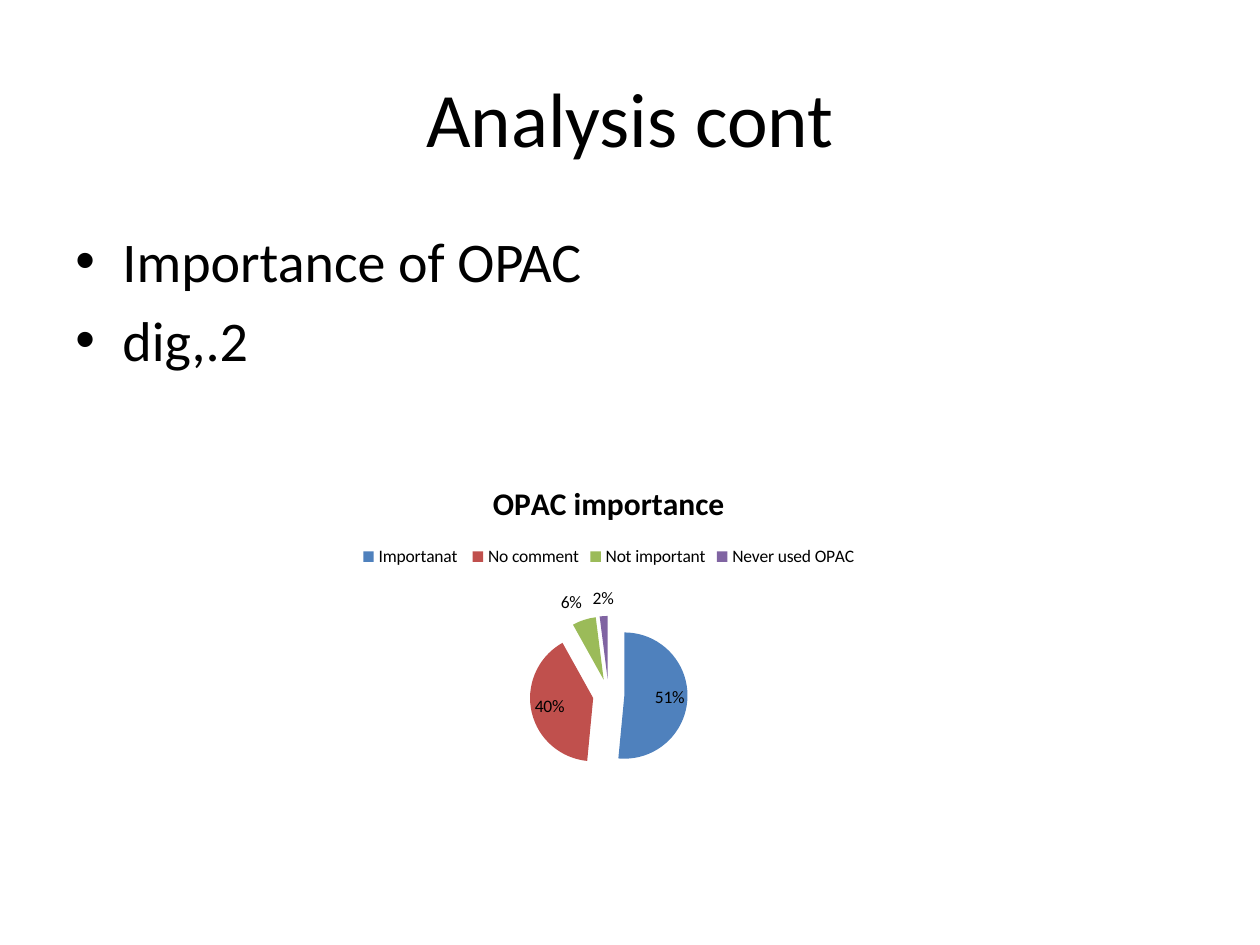
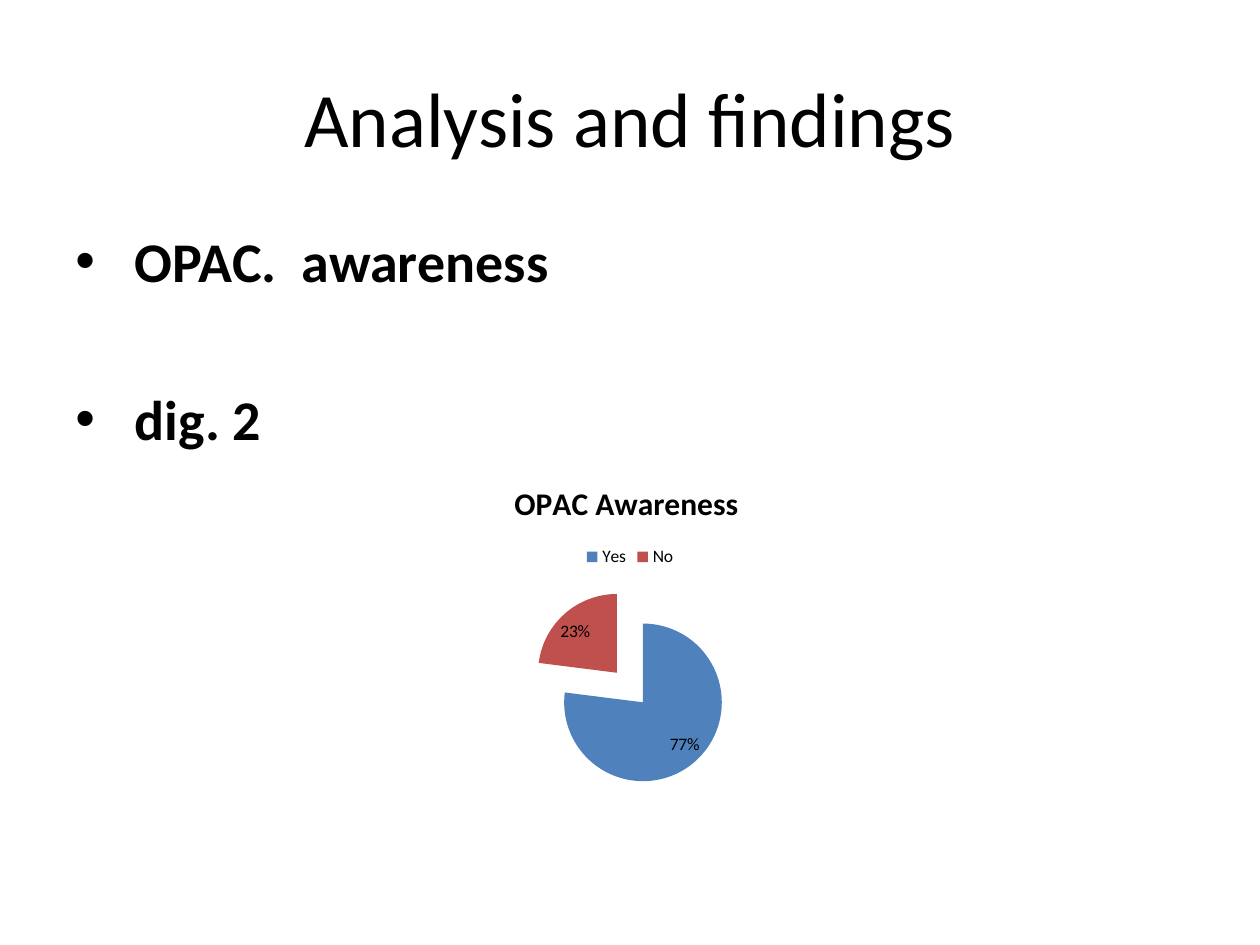
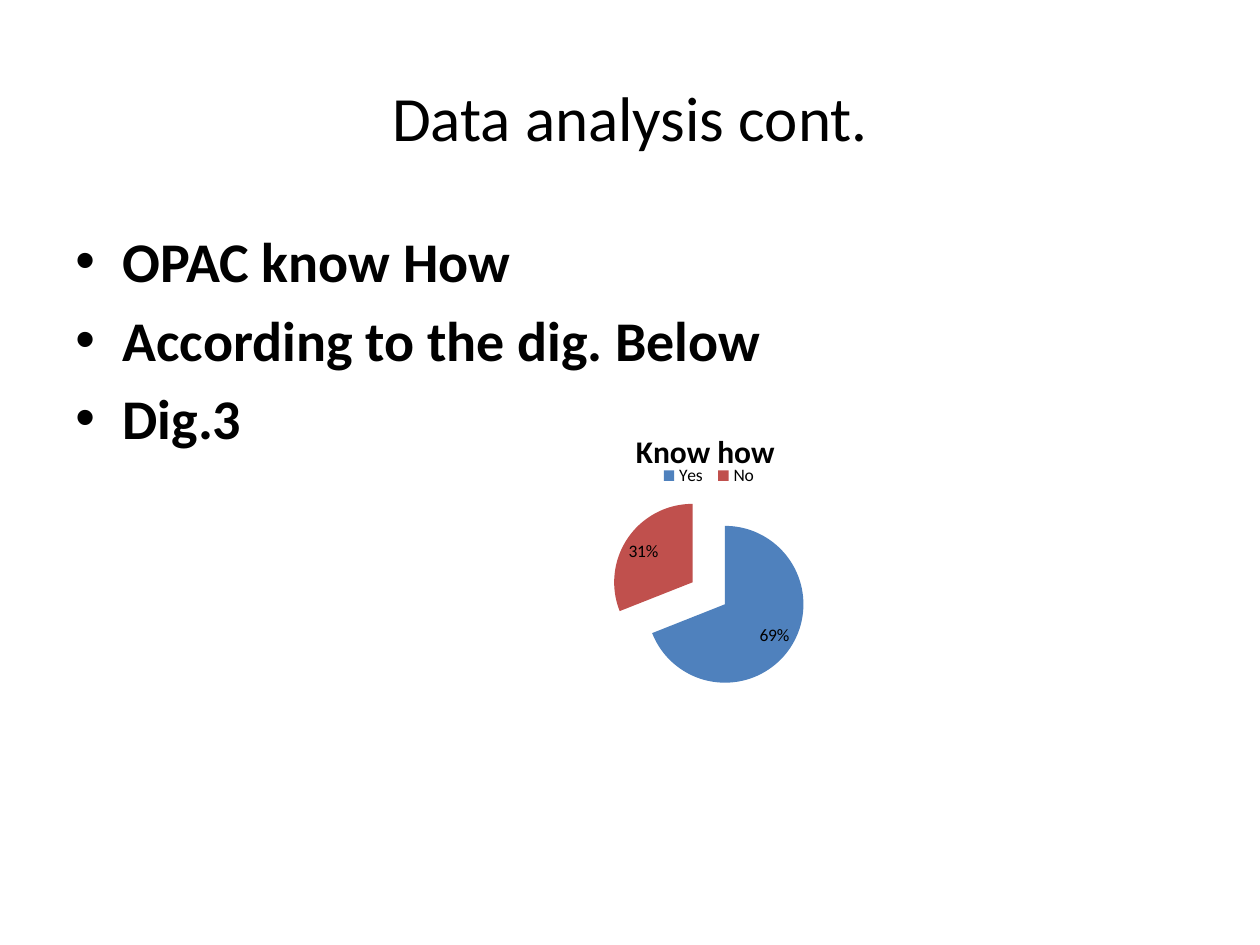
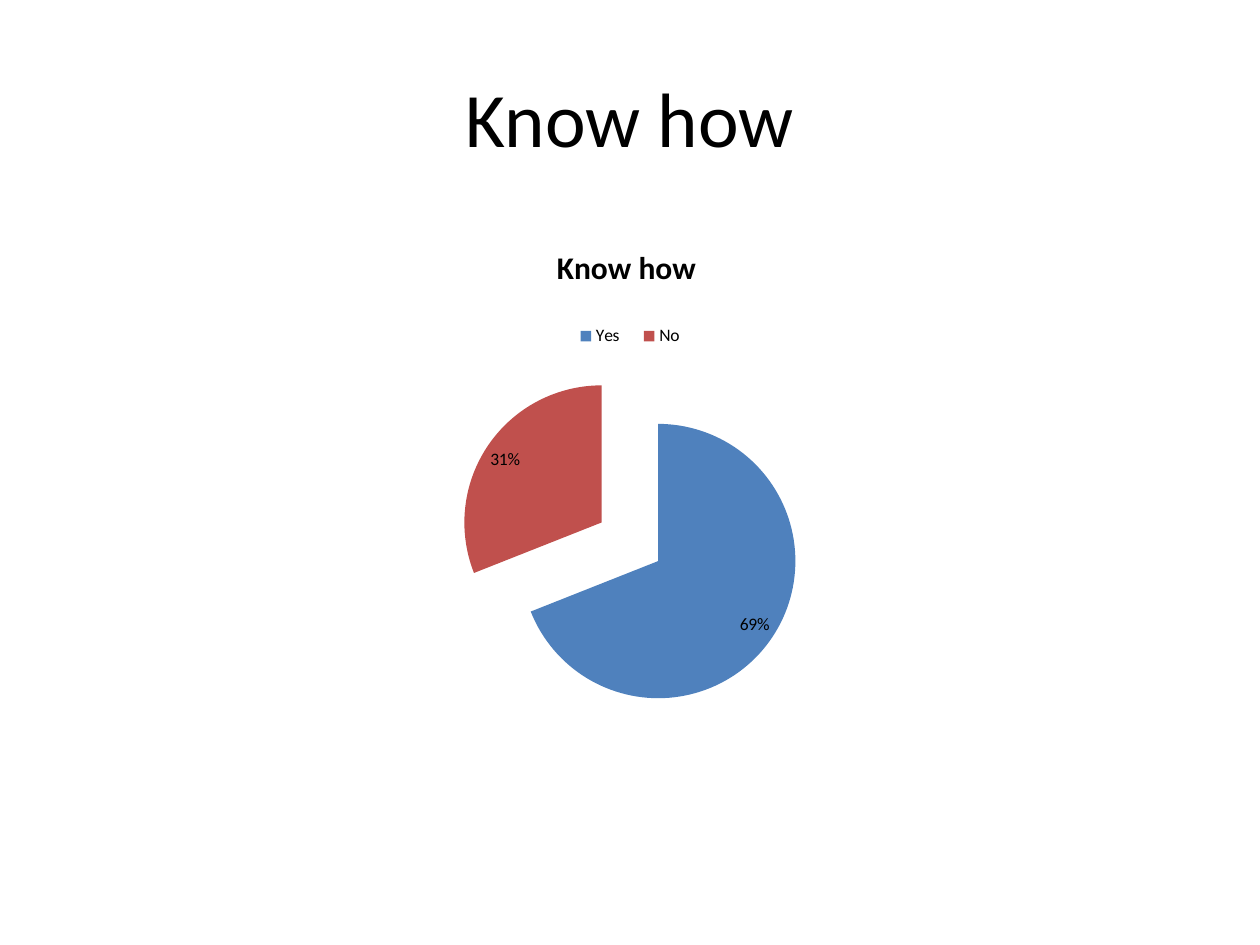
"""Build four slides of pie charts on how the OPAC is used."""
import pptx
import pptx.chart.data
import pptx.dml.color
import pptx.enum.chart
import pptx.enum.text
import pptx.oxml
import pptx.oxml.ns
import pptx.util

Cm = pptx.util.Cm
Pt = pptx.util.Pt
qn = pptx.oxml.ns.qn

FONT = "Calibri"
HUES = {"ink": "000000", "paper": "FFFFFF", "blue": "4F81BD",
        "red": "C0504D", "green": "9BBB59", "violet": "8064A2"}
WEDGES = ["blue", "red", "green", "violet"]
EXPLODE = 25
HEAD = (1.27, 0.76, 22.86, 3.18)
BODY = (1.27, 4.45, 22.86, 12.57)
PLOT = {"x": 0.09, "y": 0.24, "w": 0.82, "h": 0.55}
KEY = {"x": 0.44, "y": 0.15, "w": 0.12, "h": 0.07}
GAP = 6.4
LINE = 45
KNOW = {"title": "Know how ", "name": "Series 1",
        "data": {"Yes": 69, "No": 31}, "plot": PLOT, "key": KEY}

SLIDES = [
    {"title": "Analysis cont", "size": 44, "bold": False, "indent": 0.95,
     "points": [("Importance of OPAC", 0), ("dig,.2", 0)],
     "box": (4.65, 9.32, 15.24, 6.63),
     "pie": {"title": "OPAC importance", "name": "OPAC importance",
             "data": {"Importanat ": 51, "No comment": 40,
                      "Not important": 6, "Never used OPAC": 2}}},
    {"title": "Analysis and findings", "size": 44, "bold": True, "indent": 1.2,
     "points": [("OPAC.  awareness", 0), ("dig. 2", 1)],
     "box": (5.08, 9.32, 15.24, 6.88),
     "pie": {"title": "OPAC Awareness ", "name": "OPAC Awareness ",
             "data": {"Yes": 77, "No": 23}}},
    {"title": "Data analysis cont.", "size": 36, "bold": True, "indent": 0.95,
     "points": [("OPAC know How", 0), ("According to the dig. Below", 0),
                ("Dig.3", 0)],
     "box": (5.08, 8.26, 18.42, 7.19), "pie": KNOW},
    {"title": "Know how", "size": 44, "points": [], "box": BODY, "pie": KNOW},
]


def hue(name):
    return pptx.dml.color.RGBColor.from_string(HUES[name])


def style(font, size, bold=False):
    font.name, font.size, font.bold = FONT, Pt(size), bold
    font.color.rgb = hue("ink")


def frame(slide, box):
    text = slide.shapes.add_textbox(*map(Cm, box)).text_frame
    text.word_wrap = True
    return text


def write(para, words, size, bold=False):
    run = para.add_run()
    run.text = words
    style(run.font, size, bold)


def add_title(slide, words, size):
    text = frame(slide, HEAD)
    text.vertical_anchor = pptx.enum.text.MSO_ANCHOR.MIDDLE
    para = text.paragraphs[0]
    para.alignment = pptx.enum.text.PP_ALIGN.CENTER
    write(para, words, size)


def add_points(slide, points, bold, indent):
    text = frame(slide, BODY)
    for num, (words, skip) in enumerate(points):
        para = text.add_paragraph() if num else text.paragraphs[0]
        para.space_before = Pt(GAP + skip * LINE)
        props = para._p.get_or_add_pPr()
        props.set("marL", str(Cm(indent)))
        props.set("indent", str(-Cm(indent)))
        face = pptx.oxml.ns.nsdecls("a")
        for mark in ('buFont %s typeface="Arial"', 'buChar %s char="•"'):
            props.append(pptx.oxml.parse_xml("<a:" + mark % face + "/>"))
        write(para, words, 32, bold)


def place(part, spot, rank, target=()):
    old = part.find(qn("c:layout"))
    if old is not None:
        part.remove(old)
    rows = [*target, ("xMode", "edge"), ("yMode", "edge"), *spot.items()]
    inner = "".join(f'<c:{tag} val="{val}"/>' for tag, val in rows)
    part.insert(rank, pptx.oxml.parse_xml(
        f'<c:layout {pptx.oxml.ns.nsdecls("c")}><c:manualLayout>'
        f"{inner}</c:manualLayout></c:layout>"))


def add_pie(slide, box, pie):
    data = pptx.chart.data.CategoryChartData()
    data.categories = list(pie["data"])
    vals = list(pie["data"].values())
    data.add_series(pie["name"], vals)
    kind = pptx.enum.chart.XL_CHART_TYPE.PIE
    chart = slide.shapes.add_chart(kind, *map(Cm, box), data).chart
    style(chart.font, 10)
    chart.has_title = True
    write(chart.chart_title.text_frame.paragraphs[0], pie["title"], 18, True)
    chart.chart_title.include_in_layout = False
    chart.has_legend = True
    chart.legend.position = pptx.enum.chart.XL_LEGEND_POSITION.TOP
    chart.legend.include_in_layout = False
    if "plot" in pie:
        area = chart._chartSpace.chart.plotArea
        place(area, pie["plot"], 0, [("layoutTarget", "inner")])
        place(chart.legend._element, pie["key"], 1)

    plot = chart.plots[0]
    plot.vary_by_categories = True
    series = plot.series[0]
    series._element.find(qn("c:tx")).addnext(pptx.oxml.parse_xml(
        f'<c:explosion {pptx.oxml.ns.nsdecls("c")} val="{EXPLODE}"/>'))
    for num, name in enumerate(WEDGES[:len(vals)]):
        fill = series.points[num].format.fill
        fill.solid()
        fill.fore_color.rgb = hue(name)

    whole = sum(vals) == 100
    tags = series.data_labels
    tags.show_percentage = whole
    tags.show_value = not whole
    tags.number_format = "0%" if whole else '0"%"'
    tags.number_format_is_linked = False
    style(tags.font, 10)


def main():
    deck = pptx.Presentation()
    deck.slide_width, deck.slide_height = Cm(25.4), Cm(19.05)
    for page in SLIDES:
        slide = deck.slides.add_slide(deck.slide_layouts[6])
        slide.background.fill.solid()
        slide.background.fill.fore_color.rgb = hue("paper")
        add_title(slide, page["title"], page["size"])
        if page["points"]:
            add_points(slide, page["points"], page["bold"], page["indent"])
        add_pie(slide, page["box"], page["pie"])
    deck.save("out.pptx")


if __name__ == "__main__":
    main()
